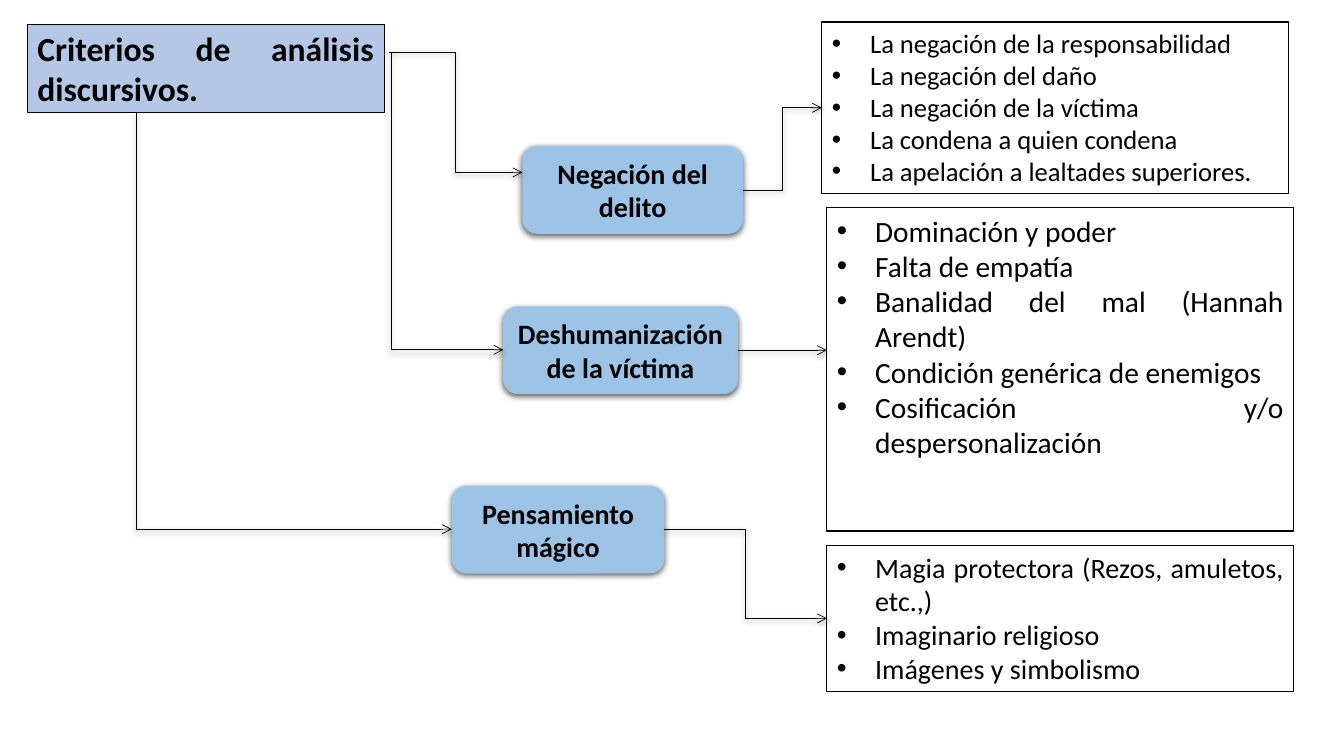
from lxml import etree
from pptx import Presentation
from pptx.dml.color import RGBColor
from pptx.enum.shapes import MSO_CONNECTOR, MSO_SHAPE
from pptx.enum.text import MSO_ANCHOR, MSO_AUTO_SIZE, PP_ALIGN
from pptx.oxml import parse_xml
from pptx.oxml.ns import nsdecls, qn
from pptx.util import Inches, Pt

BLACK = RGBColor(0x00, 0x00, 0x00)
WHITE = RGBColor(0xFF, 0xFF, 0xFF)
TITLE_BLUE = RGBColor(0xB4, 0xC7, 0xE7)
NODE_BLUE = RGBColor(0x9D, 0xC3, 0xE6)
SHADOW = (f'<a:effectLst {nsdecls("a")}><a:outerShdw blurRad="57150" dist="19050" '
          'dir="5400000" algn="ctr" rotWithShape="0"><a:srgbClr val="000000">'
          '<a:alpha val="63000"/></a:srgbClr></a:outerShdw></a:effectLst>')


def write(p, text, size, bold, align):
    p.alignment = align
    p.line_spacing = 1.0
    p.space_before = Pt(0)
    r = p.add_run()
    r.text = text
    r.font.name = "Calibri"
    r.font.size = Pt(size)
    r.font.bold = bold
    r.font.color.rgb = BLACK


def finish_arrow(cxn):
    """Give a connector its thin black line, open arrowhead and soft shadow."""
    cxn.line.color.rgb = BLACK
    cxn.line.width = Pt(0.5)
    ln = cxn.line._get_or_add_ln()
    etree.SubElement(ln, qn("a:tailEnd"), type="arrow")
    cxn._element.spPr.append(parse_xml(SHADOW))


prs = Presentation()
prs.slide_width, prs.slide_height = Inches(13.33), Inches(7.5)
s = prs.slides.add_slide(prs.slide_layouts.get_by_name("Comparison"))

# Title
title = s.shapes.title
title.left, title.top = Inches(0.27), Inches(0.24)
title.width, title.height = Inches(3.54), Inches(0.87)
title._element.spPr.append(parse_xml(
    f'<a:prstGeom {nsdecls("a")} prst="roundRect"><a:avLst/></a:prstGeom>'))
title.fill.solid()
title.fill.fore_color.rgb = TITLE_BLUE
title.line.color.rgb = BLACK
title.line.width = Pt(0.5)
tf = title.text_frame
tf.auto_size = MSO_AUTO_SIZE.NONE
tf.vertical_anchor = MSO_ANCHOR.MIDDLE
write(tf.paragraphs[0], "Criterios de análisis discursivos.", 24, True, PP_ALIGN.JUSTIFY)

# Categories
categories = [
    ("Negación del delito", 5.18, 1.45, 2.19),
    ("Deshumanización de la víctima", 4.99, 3.04, 2.33),
    ("Pensamiento mágico", 4.48, 4.82, 2.11),
]
nodes = []
for text, x, y, w in categories:
    sp = s.shapes.add_shape(MSO_SHAPE.ROUNDED_RECTANGLE,
                            Inches(x), Inches(y), Inches(w), Inches(0.87))
    sp.fill.solid()
    sp.fill.fore_color.rgb = NODE_BLUE
    sp.line.fill.background()
    sp._element.spPr.append(parse_xml(SHADOW))
    tf = sp.text_frame
    tf.word_wrap = True
    tf.vertical_anchor = MSO_ANCHOR.MIDDLE
    write(tf.paragraphs[0], text, 20, True, PP_ALIGN.CENTER)
    nodes.append(sp)

# Lists of criteria
lists = [
    (8.15, 0.22, 1.7, 19, [
        "La negación de la responsabilidad",
        "La negación del daño",
        "La negación de la víctima",
        "La condena a quien condena",
        "La apelación a lealtades superiores.",
    ]),
    (8.2, 2.06, 3.21, 21, [
        "Dominación y poder",
        "Falta de empatía",
        "Banalidad del mal (Hannah Arendt)",
        "Condición genérica de enemigos",
        "Cosificación y/o despersonalización",
    ]),
    (8.2, 5.41, 1.45, 20, [
        "Magia protectora (Rezos, amuletos, etc.,)",
        "Imaginario religioso",
        "Imágenes y simbolismo",
    ]),
]
bodies = [ph for ph in s.placeholders if 1 <= ph.placeholder_format.idx <= 4]
spare = bodies.pop()
spare._element.getparent().remove(spare._element)
for body, (x, y, h, size, items) in zip(bodies, lists):
    body.left, body.top = Inches(x), Inches(y)
    body.width, body.height = Inches(4.63), Inches(h)
    body.fill.solid()
    body.fill.fore_color.rgb = WHITE
    body.line.color.rgb = BLACK
    body.line.width = Pt(1)
    tf = body.text_frame
    tf.auto_size = MSO_AUTO_SIZE.NONE
    tf.vertical_anchor = MSO_ANCHOR.TOP
    for i, item in enumerate(items):
        p = tf.add_paragraph() if i else tf.paragraphs[0]
        pPr = p._p.get_or_add_pPr()
        pPr.set("marL", str(Inches(0.38)))
        pPr.set("indent", str(-Inches(0.38)))
        etree.SubElement(pPr, qn("a:buFont"), typeface="Arial")
        etree.SubElement(pPr, qn("a:buChar"), char="•")
        write(p, item, size, False, PP_ALIGN.JUSTIFY)

# Arrows from the title: one stepped, two going down and then right
step = s.shapes.add_connector(MSO_CONNECTOR.ELBOW, Inches(3.86), Inches(0.52),
                              Inches(5.18), Inches(1.71))
finish_arrow(step)
for x1, y1, x2, y2 in [(1.35, 1.12, 4.48, 5.25), (3.88, 0.52, 4.99, 3.47)]:
    run, drop = x2 - x1, y2 - y1
    left, top = (x1 + x2 - drop) / 2, (y1 + y2 - run) / 2
    cxn = s.shapes.add_connector(MSO_CONNECTOR.ELBOW, Inches(left), Inches(top),
                                 Inches(left + drop), Inches(top + run))
    spPr = cxn._element.spPr
    spPr.find(qn("a:prstGeom")).set("prst", "bentConnector2")
    spPr.find(qn("a:xfrm")).set("rot", str(270 * 60000))
    spPr.find(qn("a:xfrm")).set("flipH", "1")
    finish_arrow(cxn)

# Arrows from each category to its list
kinds = [MSO_CONNECTOR.ELBOW, MSO_CONNECTOR.STRAIGHT, MSO_CONNECTOR.ELBOW]
for kind, node, body in zip(kinds, nodes, bodies):
    cxn = s.shapes.add_connector(kind, node.left + node.width, node.top + node.height // 2,
                                 body.left, body.top + body.height // 2)
    cxn.begin_connect(node, 3)
    cxn.end_connect(body, 1)
    if kind == MSO_CONNECTOR.STRAIGHT:
        # Both ends sit on the category's centre line
        cxn.end_y = cxn.begin_y
    finish_arrow(cxn)

prs.save("out.pptx")
